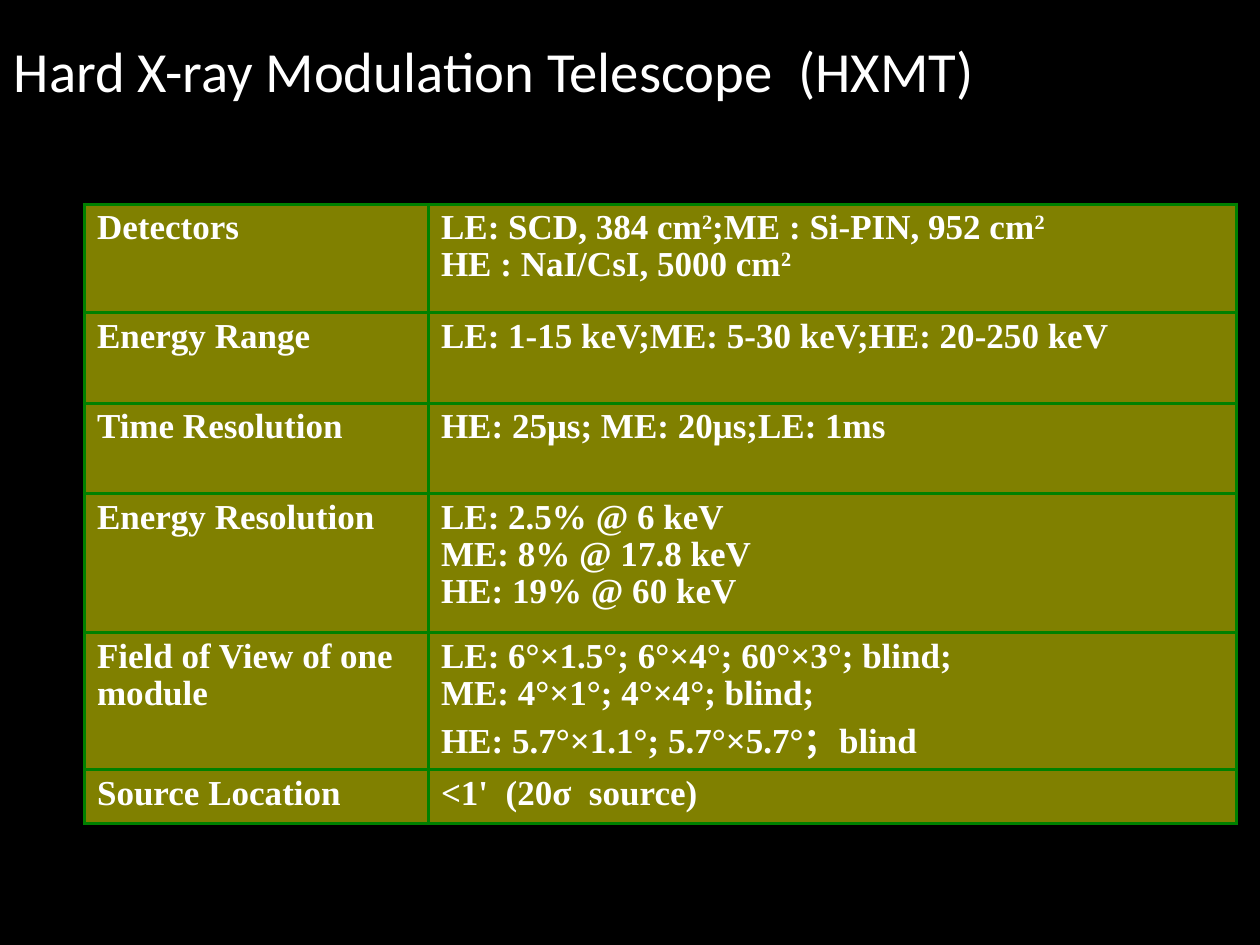
from lxml.etree import SubElement
from pptx import Presentation
from pptx.dml.color import RGBColor
from pptx.enum.text import MSO_ANCHOR, PP_ALIGN
from pptx.oxml import parse_xml
from pptx.oxml.ns import nsdecls, qn
from pptx.util import Inches, Pt

TITLE = "Hard X-ray Modulation Telescope  (HXMT)"

# Text between two carets is superscript.
SPECIFICATIONS = [
    ("Detectors", ["LE: SCD, 384 cm^2^;ME\u00a0: Si-PIN, 952 cm^2^",
                   "HE\u00a0: NaI/CsI, 5000 cm^2^"]),
    ("Energy Range", ["LE: 1-15 keV;ME: 5-30 keV;HE: 20-250 keV"]),
    ("Time Resolution", ["HE: 25μs; ME: 20μs;LE: 1ms"]),
    ("Energy Resolution", ["LE: 2.5% @ 6 keV",
                           "ME: 8% @ 17.8 keV",
                           "HE: 19% @ 60 keV"]),
    ("Field of View of one module", ["LE: 6°×1.5°; 6°×4°; 60°×3°; blind;",
                                     "ME: 4°×1°; 4°×4°; blind;",
                                     "HE: 5.7°×1.1°; 5.7°×5.7°；blind"]),
    ("Source Location", ["<1'  (20σ  source)"]),
]
COLUMN_WIDTHS = [2.73, 6.41]
ROW_HEIGHTS = [0.86, 0.72, 0.72, 1.1, 1.09, 0.43]
TABLE_LEFT, TABLE_TOP = 0.67, 1.62
HANGING_INDENT = 0.54

WHITE = RGBColor(0xFF, 0xFF, 0xFF)
THEME = {
    "background": RGBColor(0, 0, 0),
    "cell": RGBColor(0xFF, 0xFF, 0),
    "cell_opacity": 50,
    "border": "008000",
    "border_width": 2,
    "line_spacing": 0.95,
    "title": {"name": "Calibri", "size": Pt(32.4), "color": WHITE},
    "body": {"name": "Times New Roman", "size": Pt(20), "bold": True, "color": WHITE},
}


def add_span(para, text, style):
    span = para.add_run()
    span.text = text
    for name, value in style.items():
        if name == "color":
            span.font.color.rgb = value
        else:
            setattr(span.font, name, value)
    return span


def write_line(para, line, indent):
    # A line with a full-width mark keeps single spacing.
    para.line_spacing = 1.0 if "；" in line else THEME["line_spacing"]
    if indent:
        properties = para._p.get_or_add_pPr()
        properties.set("marL", str(Inches(indent)))
        properties.set("indent", str(-Inches(indent)))
    for index, part in enumerate(line.split("^")):
        if part:
            span = add_span(para, part, THEME["body"])
            if index % 2:
                span._r.get_or_add_rPr().set("baseline", "30000")


def style_cell(cell):
    """Give the cell a translucent fill and a border on all four sides."""
    cell.fill.solid()
    cell.fill.fore_color.rgb = THEME["cell"]
    properties = cell._tc.get_or_add_tcPr()
    color = properties.find(qn("a:solidFill"))[0]
    SubElement(color, qn("a:alpha")).set("val", str(THEME["cell_opacity"] * 1000))
    for index, side in enumerate("LRTB"):
        properties.insert(index, parse_xml(
            f'<a:ln{side} {nsdecls("a")} w="{Pt(THEME["border_width"])}">'
            f'<a:solidFill><a:srgbClr val="{THEME["border"]}"/></a:solidFill></a:ln{side}>'))


def fill_cell(cell, lines, indent=0):
    style_cell(cell)
    frame = cell.text_frame
    for index, line in enumerate(lines):
        para = frame.add_paragraph() if index else frame.paragraphs[0]
        write_line(para, line, indent)


def add_title(slide):
    box = slide.shapes.add_textbox(Inches(0.01), Inches(0.13), Inches(7.82), Inches(0.85))
    frame = box.text_frame
    frame.word_wrap = True
    frame.margin_left = frame.margin_right = Inches(0.05)
    frame.vertical_anchor = MSO_ANCHOR.MIDDLE
    para = frame.paragraphs[0]
    para.alignment = PP_ALIGN.CENTER
    add_span(para, TITLE, THEME["title"])


def add_specification_table(slide):
    table = slide.shapes.add_table(
        len(SPECIFICATIONS), len(COLUMN_WIDTHS), Inches(TABLE_LEFT), Inches(TABLE_TOP),
        Inches(sum(COLUMN_WIDTHS)), Inches(sum(ROW_HEIGHTS))).table
    table.first_row = table.horz_banding = False
    for column, width in zip(table.columns, COLUMN_WIDTHS):
        column.width = Inches(width)
    for row, height, (label, values) in zip(table.rows, ROW_HEIGHTS, SPECIFICATIONS):
        row.height = Inches(height)
        fill_cell(row.cells[0], [label])
        fill_cell(row.cells[1], values, HANGING_INDENT)


def main():
    deck = Presentation()
    deck.slide_width, deck.slide_height = Inches(10), Inches(7.5)
    slide = deck.slides.add_slide(deck.slide_layouts[6])
    slide.background.fill.solid()
    slide.background.fill.fore_color.rgb = THEME["background"]
    add_title(slide)
    add_specification_table(slide)
    deck.save("out.pptx")


if __name__ == "__main__":
    main()
